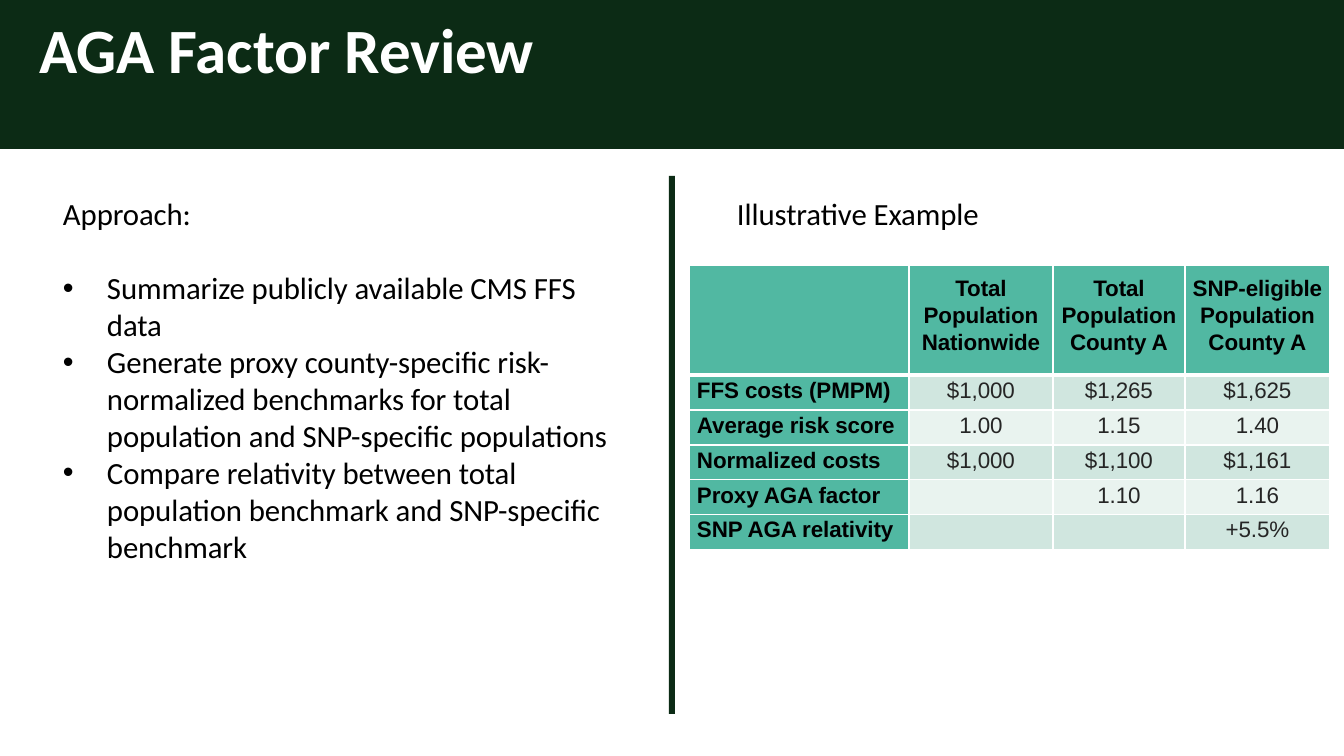
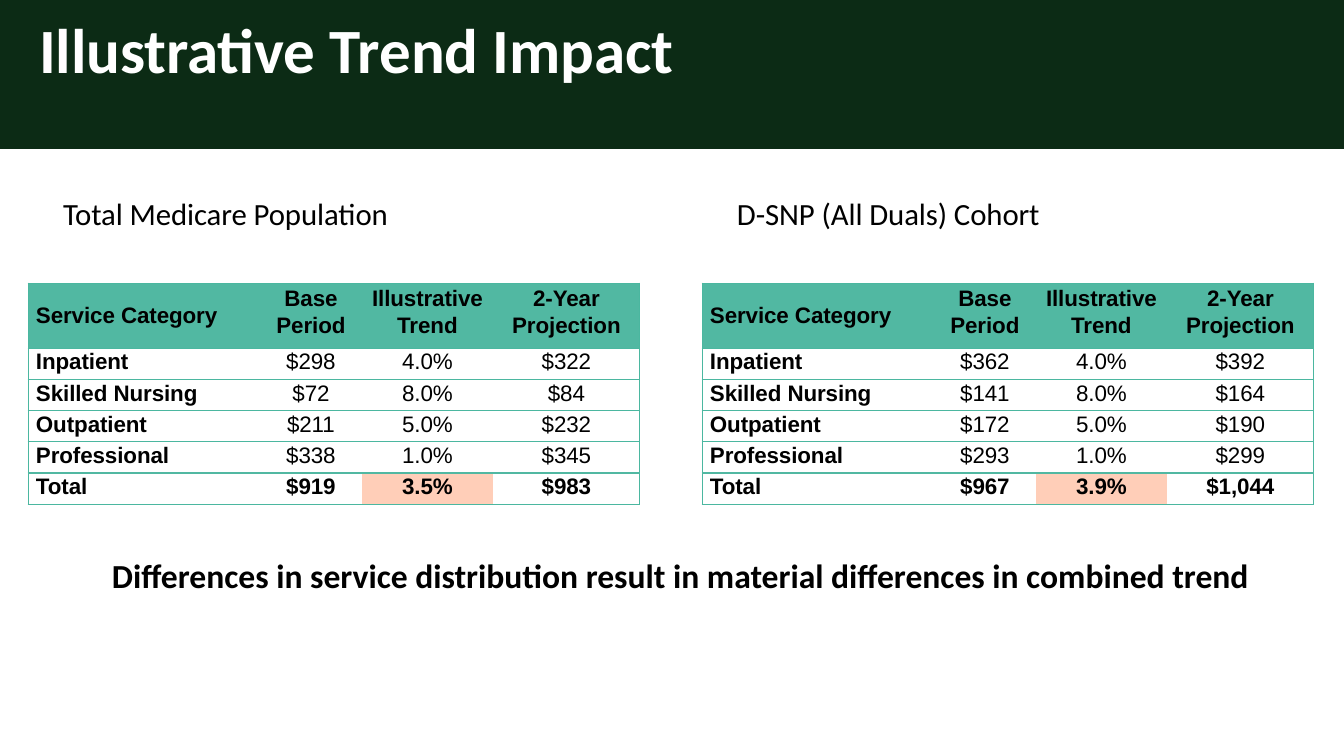
import dataclasses

import pptx
import pptx.dml.color
import pptx.enum.text
import pptx.oxml.ns
import pptx.util
from lxml import etree

PX = 914400 / 100.8
PLAIN_TABLE = "{2D5ABB26-0587-4C30-8999-92F81FD0307C}"
ALIGN = pptx.enum.text.PP_ALIGN
ANCHOR = pptx.enum.text.MSO_ANCHOR
qn = pptx.oxml.ns.qn


@dataclasses.dataclass(frozen=True)
class Theme:
    forest: str = "0C2B15"
    teal: str = "51B8A2"
    rule: str = "4BB7A0"
    band_dark: str = "D0E6DF"
    band_light: str = "E9F3EF"
    peach: str = "FFCEB8"
    white: str = "FFFFFF"
    black: str = "000000"
    charcoal: str = "252525"
    text_font: str = "Calibri"
    table_font: str = "Arial"
    title_size: int = 45
    message_size: int = 24
    body_size: int = 22
    table_size: int = 16


theme = Theme()


def write(para, text, color, align=ALIGN.LEFT, tracking=-5, **font):
    """Fill a paragraph with one formatted run; tracking is in hundredths of a point."""
    para.alignment = align
    span = para.add_run()
    span.text = text
    font["size"] = pptx.util.Pt(font["size"])
    for name, value in font.items():
        setattr(span.font, name, value)
    span.font.color.rgb = pptx.dml.color.RGBColor.from_string(color)
    span._r.get_or_add_rPr().set("spc", str(tracking))


def add_border(cell, side, color, points):
    """Draw one edge of a cell; call in the order L, R, T, B, before the fill."""
    props = cell._tc.get_or_add_tcPr()
    width = str(int(pptx.util.Pt(points)))
    line = etree.SubElement(props, qn(f"a:ln{side}"), w=width)
    solid = etree.SubElement(line, qn("a:solidFill"))
    etree.SubElement(solid, qn("a:srgbClr"), val=color)


deck = pptx.Presentation()
deck.slide_width = round(1344 * PX)
deck.slide_height = round(756 * PX)

# Pages: title band, with a divider where the page has two columns
band = (0, 0, 1344, 149)
divider = (669, 176, 675, 714)
pages = []
for title_text, bars in (
    ("AGA Factor Review", [band, divider]),
    ("Illustrative Trend Impact", [band]),
):
    page = deck.slides.add_slide(deck.slide_layouts[5])
    pages.append(page)
    outline = page.shapes.build_freeform(0, 0, scale=PX)
    for left, top, right, bottom in bars:
        outline.move_to(left, top)
        outline.add_line_segments([(right, top), (right, bottom), (left, bottom)], close=True)
    shape = outline.convert_to_shape()
    shape.shadow.inherit = False
    shape.fill.solid()
    shape.fill.fore_color.rgb = pptx.dml.color.RGBColor.from_string(theme.forest)
    shape.line.fill.background()
    title = page.shapes.title
    shape.element.addnext(title.element)
    for name, value in dict(left=39, top=9, width=781, height=154).items():
        setattr(title, name, round(value * PX))
    frame = title.text_frame
    for name, value in dict(
        margin_left=0, margin_right=0, margin_top=round(PX), margin_bottom=0,
        word_wrap=True, vertical_anchor=ANCHOR.TOP,
        auto_size=pptx.enum.text.MSO_AUTO_SIZE.NONE,
    ).items():
        setattr(frame, name, value)
    write(frame.paragraphs[0], title_text, theme.white, name=theme.text_font,
          size=theme.title_size, bold=True)

review, trend = pages

# Text boxes
approach = [
    "Summarize publicly available CMS FFS data",
    "Generate proxy county-specific risk-normalized benchmarks for total "
    "population and SNP-specific populations",
    "Compare relativity between total population benchmark and SNP-specific benchmark",
]
message = "Differences in service distribution result in material differences in combined trend"
for page, place, lines, size, bold, bulleted in (
    (review, (63, 194, 132, 39), ["Approach:"], theme.body_size, False, False),
    (review, (63, 268, 551, 298), approach, theme.body_size, False, True),
    (review, (737, 194, 248, 39), ["Illustrative Example"], theme.body_size, False, False),
    (trend, (63, 194, 335, 39), ["Total Medicare Population"], theme.body_size, False, False),
    (trend, (737, 194, 308, 39), ["D-SNP (All Duals) Cohort"], theme.body_size, False, False),
    (trend, (112, 554, 1146, 43), [message], theme.message_size, True, False),
):
    frame = page.shapes.add_textbox(*(round(v * PX) for v in place)).text_frame
    for name, value in dict(
        margin_left=0, margin_right=0, margin_top=round(PX), margin_bottom=0, word_wrap=True,
    ).items():
        setattr(frame, name, value)
    for index, line_text in enumerate(lines):
        para = frame.add_paragraph() if index else frame.paragraphs[0]
        if bulleted:
            props = para._p.get_or_add_pPr()
            props.set("marL", str(round(44 * PX)))
            props.set("indent", str(round(-44 * PX)))
            etree.SubElement(props, qn("a:buFont"), typeface=theme.table_font)
            etree.SubElement(props, qn("a:buChar"), char="•")
        write(para, line_text, theme.black, tracking=0 if bold else -5,
              name=theme.text_font, size=size, bold=bold)

# Tables
factors = [
    ["", "Total Population Nationwide", "Total Population County A",
     "SNP-eligible Population County A"],
    ["FFS costs (PMPM)", "$1,000", "$1,265", "$1,625"],
    ["Average risk score", "1.00", "1.15", "1.40"],
    ["Normalized costs", "$1,000", "$1,100", "$1,161"],
    ["Proxy AGA factor", "", "1.10", "1.16"],
    ["SNP AGA relativity", "", "", "+5.5%"],
]
trend_header = ["Service Category", "Base Period", "Illustrative Trend", "2-Year Projection"]
medicare = [
    trend_header,
    ["Inpatient", "$298", "4.0%", "$322"],
    ["Skilled Nursing", "$72", "8.0%", "$84"],
    ["Outpatient", "$211", "5.0%", "$232"],
    ["Professional", "$338", "1.0%", "$345"],
    ["Total", "$919", "3.5%", "$983"],
]
duals = [
    trend_header,
    ["Inpatient", "$362", "4.0%", "$392"],
    ["Skilled Nursing", "$141", "8.0%", "$164"],
    ["Outpatient", "$172", "5.0%", "$190"],
    ["Professional", "$293", "1.0%", "$299"],
    ["Total", "$967", "3.9%", "$1,044"],
]
factor_widths, factor_heights = [220, 144, 132, 145], [110, 35, 35, 35, 35, 35]
trend_widths, trend_heights = [219, 115, 131, 147], [65, 32, 31, 31, 31, 32]
for page, left, top, widths, heights, rows, banded in (
    (review, 689, 265, factor_widths, factor_heights, factors, True),
    (trend, 28, 283, trend_widths, trend_heights, medicare, False),
    (trend, 702, 283, trend_widths, trend_heights, duals, False),
):
    place = (left, top, sum(widths), sum(heights))
    frame = page.shapes.add_table(len(rows), len(widths), *(round(v * PX) for v in place))
    table = frame.table
    table._tbl.tblPr.find(qn("a:tableStyleId")).text = PLAIN_TABLE
    for column, width in zip(table.columns, widths):
        column.width = round(width * PX)
    for row, height in zip(table.rows, heights):
        row.height = round(height * PX)

    last_row, last_column = len(rows) - 1, len(widths) - 1
    for r, row_texts in enumerate(rows):
        for c, cell_text in enumerate(row_texts):
            cell = table.cell(r, c)
            is_label = r == 0 or c == 0
            is_corner = r == 0 and c == 0
            if banded:
                fill = theme.teal if is_label else (theme.band_light, theme.band_dark)[r % 2]
                color = theme.black if is_label else theme.charcoal
                bold, inset = is_label, 3 if r else 10
                borders = {side: (theme.white, 1) for side in "LRTB"}
                if r < 2:
                    borders["T" if r else "B"] = (theme.white, 3)
            else:
                fill = theme.teal if r == 0 else None
                if r == last_row and c == 2:
                    fill = theme.peach
                color, bold = theme.black, is_label or r == last_row
                inset = 0 if is_corner else 1 if r else 2
                thin, thick = (theme.rule, 0.75), (theme.teal, 1.5)
                borders = {}
                if c == 0:
                    borders["L"] = thin
                if c == last_column:
                    borders["R"] = thin
                borders["T"] = thick if r == last_row else thin
                borders["B"] = thick if r == last_row - 1 else thin
            for side, (line_color, points) in borders.items():
                add_border(cell, side, line_color, points)
            if fill:
                cell.fill.solid()
                cell.fill.fore_color.rgb = pptx.dml.color.RGBColor.from_string(fill)
            else:
                cell.fill.background()

            indent = 8 if c == 0 else 13 if c == 1 and not banded else 0
            for name, value in dict(
                margin_left=round(indent * PX), margin_right=0,
                margin_top=round(inset * PX), margin_bottom=0,
                vertical_anchor=ANCHOR.MIDDLE if is_corner else ANCHOR.TOP,
            ).items():
                setattr(cell, name, value)
            if cell_text:
                para = cell.text_frame.paragraphs[0]
                if r == 0 and not is_corner:
                    para.line_spacing = 1.07
                write(para, cell_text, color, ALIGN.CENTER if c else ALIGN.LEFT,
                      name=theme.table_font, size=theme.table_size, bold=bold)

deck.save("out.pptx")
